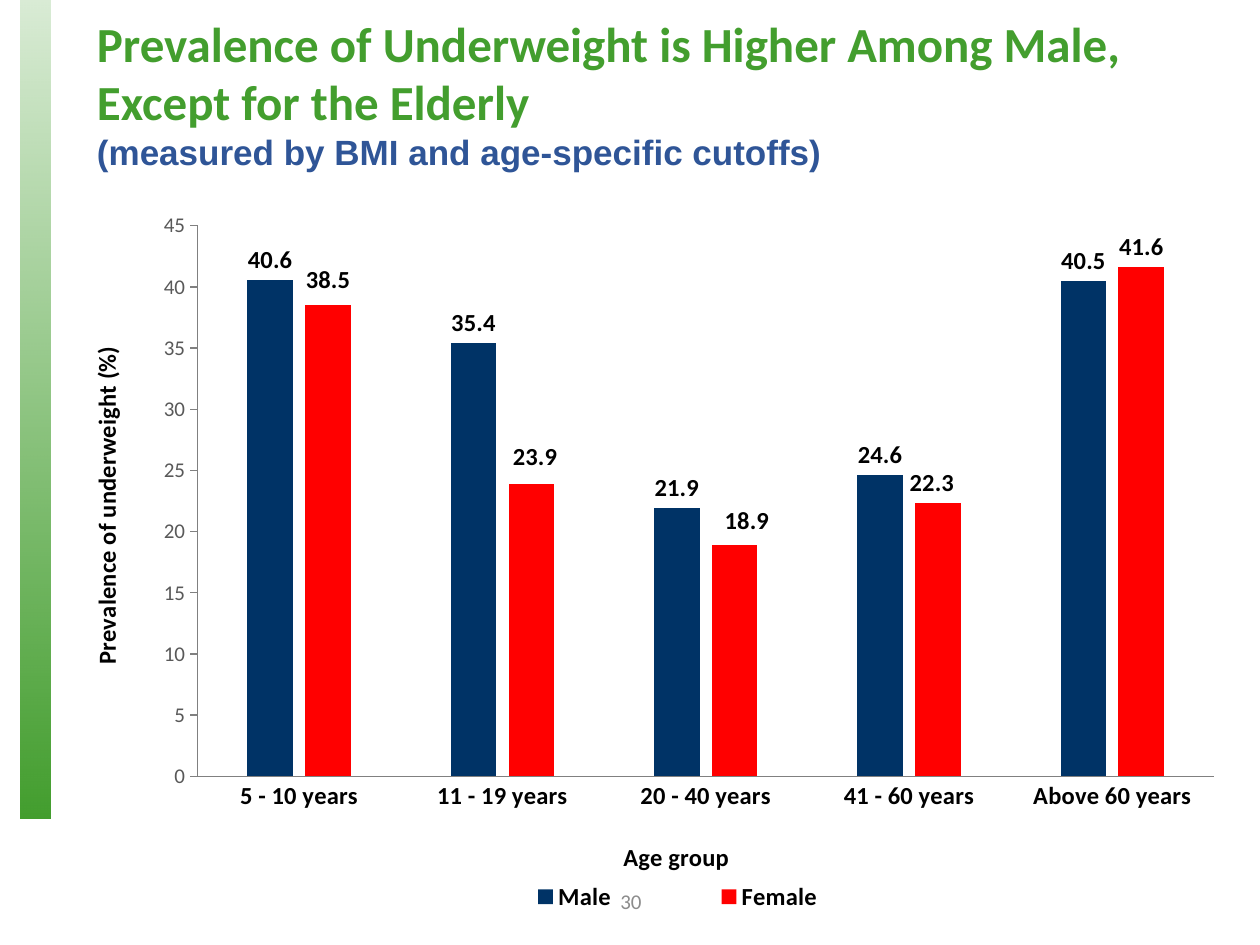
from lxml import etree
from pptx import Presentation
from pptx import util as u
from pptx.chart.data import CategoryChartData
from pptx.dml.color import RGBColor
from pptx.enum import chart as charts, shapes, text
from pptx.oxml import ns

GREEN, BLUE, BLACK = "439E2E", "2F5597", "000000"
TITLE = [
    ("Prevalence of Underweight is Higher Among Male, Except for the Elderly", 28, "Calibri", GREEN),
    ("(measured by BMI and age-specific cutoffs)", 20, "Arial", BLUE),
]
AGE_GROUPS = ["5 - 10 years", "11 - 19 years", "20 - 40 years", "41 - 60 years", "Above 60 years"]
SERIES = [
    ("Male ", [40.6, 35.4, 21.9, 24.6, 40.5], "003366"),
    ("Female", [38.5, 23.9, 18.9, 22.3, 41.6], "FF0000"),
]
FEMALE_LABEL_SHIFTS = [(0, -0.007), (0.003, -0.01), (0.01, -0.005), (-0.005, 0)]
PAGE_NUMBER = "30"


def color(value):
    return RGBColor.from_string(value)


def set_font(font, size, shade=BLACK, bold=True, name="Calibri"):
    font.size, font.bold, font.name = u.Pt(size), bold, name
    font.color.rgb = color(shade)


def set_layout(parent, index, **fields):
    for old in parent.findall(ns.qn("c:layout")):
        parent.remove(old)
    layout = etree.Element(ns.qn("c:layout"))
    manual = etree.SubElement(layout, ns.qn("c:manualLayout"))
    for tag, value in fields.items():
        etree.SubElement(manual, ns.qn("c:" + tag)).set("val", str(value))
    parent.insert(index, layout)


def add_side_band(page):
    band = page.shapes.add_shape(shapes.MSO_SHAPE.RECTANGLE, u.Cm(0.41), 0, u.Cm(0.61), u.Cm(16.51))
    band.shadow.inherit = False
    band.line.fill.background()
    band.fill.gradient()
    band.fill.gradient_angle = 270
    for stop in band.fill.gradient_stops:
        stop.color.rgb = color(GREEN)
    first_shade = band._element.spPr.find(".//" + ns.qn("a:srgbClr"))
    etree.SubElement(first_shade, ns.qn("a:alpha")).set("val", "20000")


def add_title(page):
    title = page.shapes.title
    title.left, title.top, title.width, title.height = map(u.Cm, (1.7, 0.4, 22.58, 2.95))
    frame = title.text_frame
    frame.auto_size = text.MSO_AUTO_SIZE.NONE
    frame.vertical_anchor = text.MSO_ANCHOR.MIDDLE
    frame.text = "\n".join(line[0] for line in TITLE)
    for para, (_, size, name, shade) in zip(frame.paragraphs, TITLE):
        para.alignment = text.PP_ALIGN.LEFT
        set_font(para.font, size, shade, name=name)


def add_page_number(page):
    box = page.shapes.add_textbox(u.Cm(9.86), u.Cm(17.65), u.Cm(5.72), u.Cm(1.02))
    frame = box.text_frame
    frame.word_wrap = True
    frame.vertical_anchor = text.MSO_ANCHOR.MIDDLE
    para = frame.paragraphs[0]
    para.text = PAGE_NUMBER
    para.alignment = text.PP_ALIGN.CENTER
    set_font(para.font, 12, "8C8C8C", bold=False)


def style_axis(axis, caption, x, y):
    axis.has_major_gridlines = False
    axis.format.line.color.rgb = color("808080")
    axis.format.line.width = u.Pt(0.75)
    axis.axis_title.text_frame.text = caption
    set_font(axis.axis_title.text_frame.paragraphs[0].font, 14)
    set_layout(axis.axis_title._element, 1, xMode="edge", yMode="edge", x=x, y=y)


def style_series(series, shade):
    series.format.fill.solid()
    series.format.fill.fore_color.rgb = color(shade)
    labels = series.data_labels
    labels.show_value = True
    labels.number_format, labels.number_format_is_linked = "#,##0.0", False
    labels.position = charts.XL_LABEL_POSITION.OUTSIDE_END
    set_font(labels.font, 14)


def add_prevalence_chart(page):
    data = CategoryChartData(number_format="0.0")
    data.categories = AGE_GROUPS
    for name, values, _ in SERIES:
        data.add_series(name, values)
    chart = page.shapes.add_chart(
        charts.XL_CHART_TYPE.COLUMN_CLUSTERED, u.Cm(0.18), u.Cm(4.13), u.Cm(24.69), u.Cm(14.53), data
    ).chart
    chart.has_title = False
    set_font(chart.font, 10, bold=False)

    plot = chart.plots[0]
    plot.gap_width, plot.overlap, plot.vary_by_categories = 219, -27, False
    for series, (_, _, shade) in zip(plot.series, SERIES):
        style_series(series, shade)
    for index, (x, y) in enumerate(FEMALE_LABEL_SHIFTS):
        label = plot.series[1].points[index].data_label
        label.position = charts.XL_LABEL_POSITION.OUTSIDE_END
        set_font(label.font, 14)
        set_layout(label._get_or_add_dLbl(), 1, x=x, y=y)

    ages, percents = chart.category_axis, chart.value_axis
    style_axis(ages, "Age group", 0.498, 0.875)
    ages.major_tick_mark = charts.XL_TICK_MARK.NONE
    set_font(ages.tick_labels.font, 14)
    style_axis(percents, "Prevalence of underweight (%)", 0.062, 0.19)
    percents.minimum_scale, percents.maximum_scale, percents.major_unit = 0, 45, 5
    percents.major_tick_mark = charts.XL_TICK_MARK.OUTSIDE
    percents.tick_labels.number_format = "#,##0"
    percents.tick_labels.number_format_is_linked = False
    set_font(percents.tick_labels.font, 12, "595959", bold=False)

    chart.has_legend = True
    chart.legend.position = charts.XL_LEGEND_POSITION.BOTTOM
    chart.legend.include_in_layout = False
    set_font(chart.legend.font, 14)
    edges = {"xMode": "edge", "yMode": "edge"}
    set_layout(chart.legend._element, 1, **edges, x=0.353, y=0.93, w=0.386, h=0.06)
    plot_area = chart._chartSpace.find(".//" + ns.qn("c:plotArea"))
    set_layout(plot_area, 0, layoutTarget="inner", **edges, x=0.154, y=0.029, w=0.83, h=0.764)


def main():
    """Build the underweight prevalence slide."""
    deck = Presentation()
    deck.slide_width, deck.slide_height = u.Cm(25.4), u.Cm(19.05)
    page = deck.slides.add_slide(deck.slide_layouts[5])
    add_side_band(page)
    add_page_number(page)
    add_title(page)
    add_prevalence_chart(page)
    deck.save("out.pptx")


if __name__ == "__main__":
    main()
